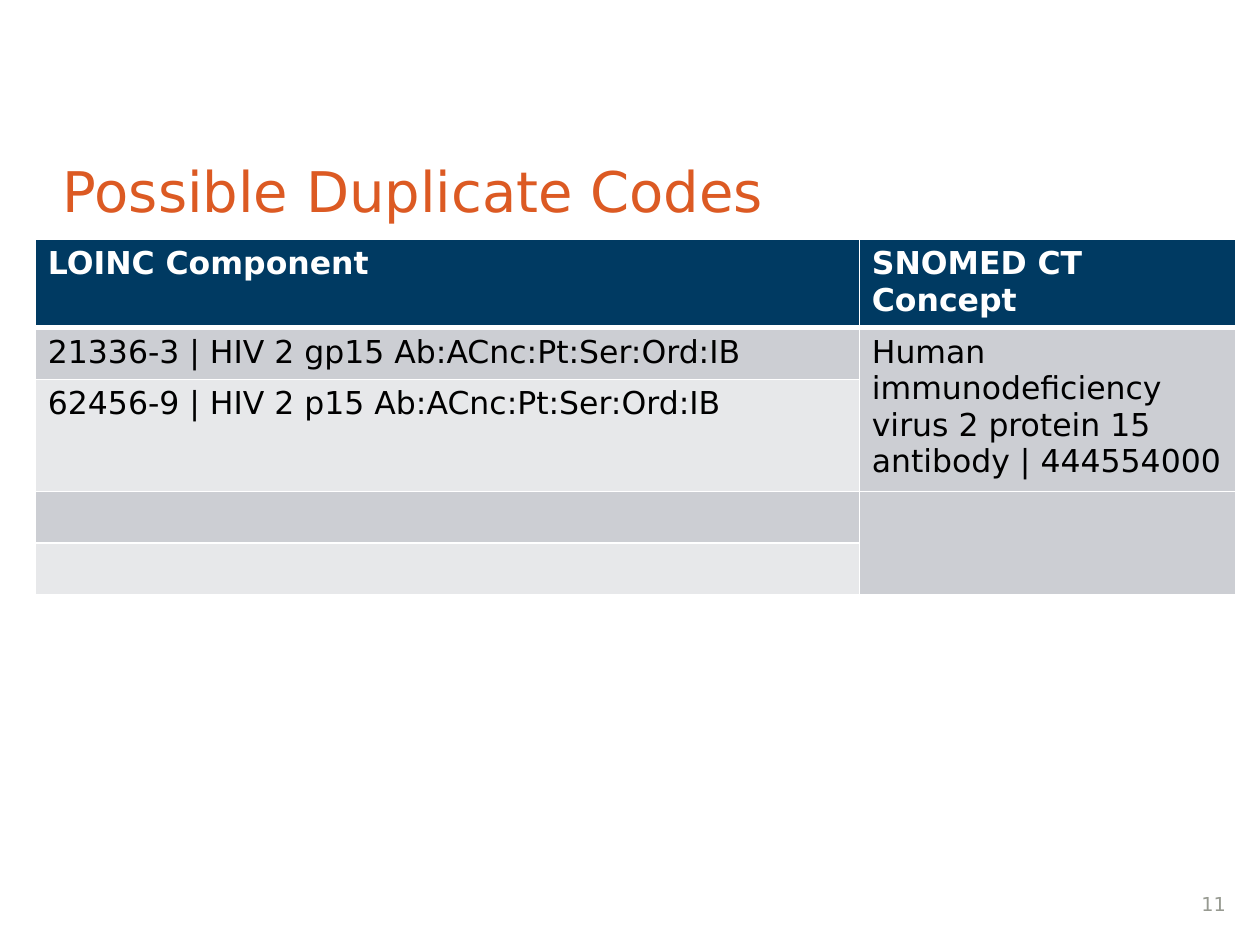
from lxml import etree
from pptx import Presentation, util as u
from pptx.dml.color import RGBColor
from pptx.enum import text
from pptx.oxml.ns import qn

FONT = "DejaVu Sans"
NAVY, GREY, PALE, WHITE, BLACK = "003A62", "CCCED3", "E7E8EA", "FFFFFF", "000000"

TITLE = ("Possible Duplicate Codes", (0.5, 1.26, 8.5, 0.5), 32, "DC5A23", "LEFT")
NUMBER = ("11", (9.02, 7.06, 0.71, 0.22), 11, "979A91", "RIGHT")

ROWS = [
    ("LOINC Component", "SNOMED CT Concept"),
    ("21336-3 | HIV 2 gp15 Ab:ACnc:Pt:Ser:Ord:IB",
     "Human immunodeficiency virus 2 protein 15 antibody | 444554000"),
    ("62456-9 | HIV 2 p15 Ab:ACnc:Pt:Ser:Ord:IB", ""),
    ("", ""),
    ("", ""),
]
FILLS = [(NAVY, NAVY), (GREY, GREY), (PALE, GREY), (GREY, GREY), (PALE, GREY)]
WIDTHS = [6.54, 2.99]
HEIGHTS = [0.67, 0.41, 0.85, 0.41, 0.41]
MERGES = [(1, 2), (3, 4)]


def rgb(code):
    return RGBColor.from_string(code)


def write(para, words, size, color, bold=False):
    para.font.size = u.Pt(size)
    if not words:
        return
    run = para.add_run()
    run.text = words
    font = run.font
    font.name, font.size, font.bold = FONT, u.Pt(size), bold
    font.color.rgb = rgb(color)


def label(slide, words, place, size, color, align):
    frame = slide.shapes.add_textbox(*map(u.Inches, place)).text_frame
    frame.word_wrap = True
    frame.vertical_anchor = text.MSO_ANCHOR.MIDDLE
    frame.margin_left = frame.margin_right = frame.margin_top = frame.margin_bottom = 0
    para = frame.paragraphs[0]
    para.alignment = text.PP_ALIGN[align]
    write(para, words, size, color)


def border(cell, row):
    props = cell._tc.get_or_add_tcPr()
    thick = {"lnB": 3} if row == 0 else {"lnT": 3} if row == 1 else {}
    for side in ("lnL", "lnR", "lnT", "lnB"):
        line = etree.SubElement(props, qn("a:" + side), w=str(u.Pt(thick.get(side, 1))))
        fill = etree.SubElement(line, qn("a:solidFill"))
        etree.SubElement(fill, qn("a:srgbClr"), val=WHITE)


def codes(slide):
    place = (0.28, 1.9, sum(WIDTHS), sum(HEIGHTS))
    table = slide.shapes.add_table(len(ROWS), len(WIDTHS), *map(u.Inches, place)).table
    for col, width in zip(table.columns, WIDTHS):
        col.width = u.Inches(width)
    for row, height in zip(table.rows, HEIGHTS):
        row.height = u.Inches(height)
    for r, (words, fills) in enumerate(zip(ROWS, FILLS)):
        for c, (word, color) in enumerate(zip(words, fills)):
            cell = table.cell(r, c)
            border(cell, r)
            cell.fill.solid()
            cell.fill.fore_color.rgb = rgb(color)
            head = r == 0
            write(cell.text_frame.paragraphs[0], word, 18, WHITE if head else BLACK, head)
    for top, end in MERGES:
        table.cell(top, 1).merge(table.cell(end, 1))


def main():
    deck = Presentation()
    deck.slide_width, deck.slide_height = u.Inches(10), u.Inches(7.5)
    slide = deck.slides.add_slide(deck.slide_layouts[6])
    label(slide, *NUMBER)
    label(slide, *TITLE)
    codes(slide)
    deck.save("out.pptx")


if __name__ == "__main__":
    main()
